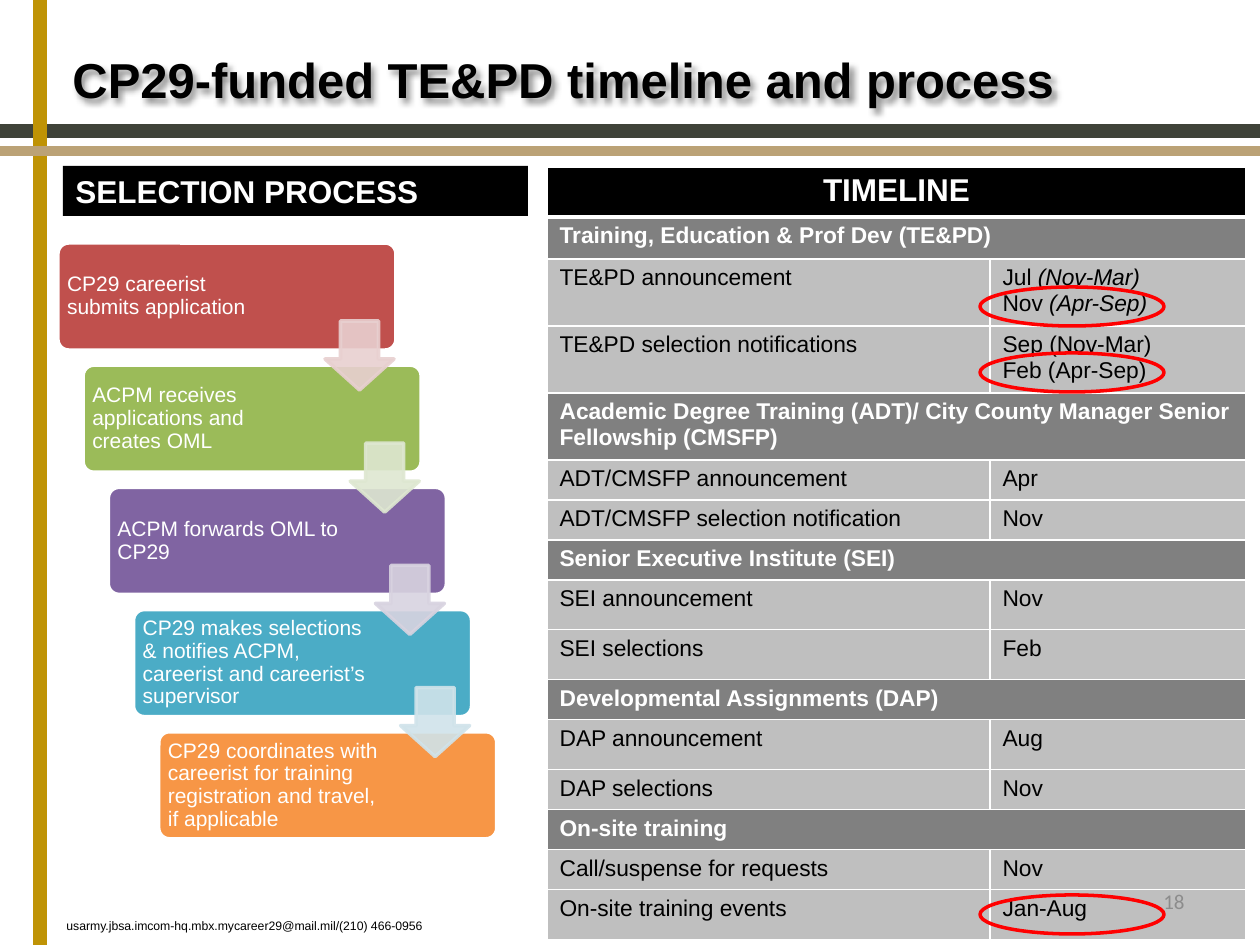
from dataclasses import dataclass

from lxml.etree import SubElement
from pptx import Presentation
from pptx.dml.color import RGBColor
from pptx.enum.shapes import MSO_SHAPE
from pptx.enum.text import MSO_ANCHOR, PP_ALIGN
from pptx.oxml import parse_xml
from pptx.oxml.ns import nsdecls, qn
from pptx.util import Emu, Pt


@dataclass(frozen=True)
class Theme:
    font: str = "Arial"
    number_font: str = "Calibri"
    black: str = "000000"
    white: str = "FFFFFF"
    olive: str = "3F4339"
    gold: str = "BF9305"
    tan: str = "BBA276"
    section: str = "808080"
    row: str = "BFBFBF"
    muted: str = "8C8C8C"
    mark: str = "FF0000"
    steps: tuple = ("C0504D", "9BBB59", "8064A2", "4BACC6", "F79646")
    arrows: tuple = ("E8D0D0", "DEE7D1", "D8D3E0", "D0E3EA")
    title_size: int = 28
    heading_size: int = 18
    table_size: int = 13
    step_size: int = 12
    footer_size: int = 7
    line: int = 2


STEPS = [
    "CP29 careerist submits application",
    "ACPM receives applications and creates OML",
    "ACPM forwards OML to CP29",
    "CP29 makes selections & notifies ACPM, careerist and careerist’s supervisor",
    "CP29 coordinates with careerist for training registration and travel, if applicable",
]

# Row height, label, then lines of (plain, italic) text; a row without lines is a section.
TIMELINE = [
    (42, "Training, Education & Prof Dev (TE&PD)", []),
    (67, "TE&PD announcement", [("Jul ", "(Nov-Mar)"), ("Nov ", "(Apr-Sep)")]),
    (67, "TE&PD selection notifications", [("Sep (Nov-Mar)", ""), ("Feb (Apr-Sep)", "")]),
    (67, "Academic Degree Training (ADT)/ City County Manager Senior Fellowship (CMSFP)", []),
    (40, "ADT/CMSFP announcement", [("Apr", "")]),
    (40, "ADT/CMSFP selection notification", [("Nov", "")]),
    (40, "Senior Executive Institute (SEI)", []),
    (50, "SEI announcement", [("Nov", "")]),
    (50, "SEI selections", [("Feb", "")]),
    (40, "Developmental Assignments (DAP)", []),
    (50, "DAP announcement", [("Aug", "")]),
    (40, "DAP selections", [("Nov", "")]),
    (40, "On-site training", []),
    (40, "Call/suspense for requests", [("Nov", "")]),
    (50, "On-site training events", [("Jan-Aug", "")]),
]


def px(n):
    return Emu(round(n * 914400 / 126))


def rgb(value):
    return RGBColor.from_string(value)


class SlideBuilder:
    def __init__(self, slide, theme):
        self.s = slide
        self.t = theme

    def style(self, p, size, color, bold=False, align=PP_ALIGN.LEFT, font=None):
        p.alignment = align
        p.font.name = font or self.t.font
        p.font.size = Pt(size)
        p.font.bold = bold
        p.font.color.rgb = rgb(color)

    def title(self, text, x, y, w, h):
        sp = self.s.shapes.title
        sp.left, sp.top, sp.width, sp.height = map(px, (x, y, w, h))
        tf = sp.text_frame
        tf.text = text
        tf.vertical_anchor = MSO_ANCHOR.MIDDLE
        self.style(tf.paragraphs[0], self.t.title_size, self.t.black, True, PP_ALIGN.CENTER)
        sp._element.spPr.append(parse_xml(
            f'<a:effectLst {nsdecls("a")}><a:outerShdw blurRad="38100" dist="38100" '
            'dir="2700000" algn="tl"><a:srgbClr val="000000"><a:alpha val="43000"/>'
            '</a:srgbClr></a:outerShdw></a:effectLst>'))

    def shape(self, kind, x, y, w, h, fill=None, line=None, adjust=(), alpha=None):
        sp = self.s.shapes.add_shape(kind, *map(px, (x, y, w, h)))
        sp.shadow.inherit = False
        for i, value in enumerate(adjust):
            sp.adjustments[i] = value
        if fill:
            sp.fill.solid()
            sp.fill.fore_color.rgb = rgb(fill)
        else:
            sp.fill.background()
        if line:
            sp.line.color.rgb = rgb(line)
            sp.line.width = Pt(self.t.line)
        else:
            sp.line.fill.background()
        if alpha:
            for color in sp._element.spPr.iter(qn("a:srgbClr")):
                SubElement(color, qn("a:alpha"), val=str(alpha * 1000))
        return sp

    def text(self, text, x, y, w, h, size, color, anchor=MSO_ANCHOR.TOP, fill=None, **style):
        sp = self.s.shapes.add_textbox(*map(px, (x, y, w, h)))
        if fill:
            sp.fill.solid()
            sp.fill.fore_color.rgb = rgb(fill)
        tf = sp.text_frame
        tf.word_wrap = True
        tf.vertical_anchor = anchor
        tf.text = text
        self.style(tf.paragraphs[0], size, color, **style)

    def step(self, text, x, y, color, right_inset):
        sp = self.shape(MSO_SHAPE.ROUNDED_RECTANGLE, x, y, 338, 107, color, self.t.white, [0.1])
        tf = sp.text_frame
        tf.word_wrap = True
        tf.vertical_anchor = MSO_ANCHOR.MIDDLE
        tf.margin_left = tf.margin_top = tf.margin_bottom = px(6)
        tf.margin_right = px(right_inset)
        tf.text = text
        p = tf.paragraphs[0]
        p.line_spacing = 0.9
        self.style(p, self.t.step_size, self.t.white)

    def cell(self, cell, lines, fill, size, color, bottom=1, **style):
        tc_pr = cell._tc.get_or_add_tcPr()
        for side in "LRTB":
            width = Pt(bottom if side == "B" else 1)
            tc_pr.append(parse_xml(
                f'<a:ln{side} {nsdecls("a")} w="{width}"><a:solidFill>'
                f'<a:srgbClr val="{self.t.white}"/></a:solidFill></a:ln{side}>'))
        cell.fill.solid()
        cell.fill.fore_color.rgb = rgb(fill)
        tf = cell.text_frame
        for i, (plain, italic) in enumerate(lines):
            p = tf.add_paragraph() if i else tf.paragraphs[0]
            p.add_run().text = plain
            if italic:
                r = p.add_run()
                r.text = italic
                r.font.italic = True
            self.style(p, size, color, **style)

    def timeline(self, heading, rows, x, y, widths):
        t = self.t
        heights = [50] + [row[0] for row in rows]
        frame = self.s.shapes.add_table(len(heights), 2, *map(px, (x, y, sum(widths), sum(heights))))
        table = frame.table
        for col, w in zip(table.columns, widths):
            col.width = px(w)
        for row, h in zip(table.rows, heights):
            row.height = px(h)

        def band(i, text, fill, size, **style):
            left, right = table.cell(i, 0), table.cell(i, 1)
            left.merge(right)
            self.cell(left, [(text, "")], fill, size, t.white, bold=True, **style)
            self.cell(right, [], fill, size, t.white)

        band(0, heading, t.black, t.heading_size, bottom=3, align=PP_ALIGN.CENTER)
        for i, (_, label, dates) in enumerate(rows, 1):
            if dates:
                self.cell(table.cell(i, 0), [(label, "")], t.row, t.table_size, t.black)
                self.cell(table.cell(i, 1), dates, t.row, t.table_size, t.black)
            else:
                band(i, label, t.section, t.table_size)


def main():
    prs = Presentation()
    prs.slide_width, prs.slide_height = px(1260), px(945)
    t = Theme()
    b = SlideBuilder(prs.slides.add_slide(prs.slide_layouts[5]), t)

    for box, color in [((0, 126, 1260, 10), t.olive), ((35, 0, 10, 945), t.gold),
                       ((0, 148, 1260, 6), t.tan)]:
        b.shape(MSO_SHAPE.RECTANGLE, *box, color, color)
    b.title("CP29-funded TE&PD timeline and process ", -24, 0, 1188, 158)

    b.timeline("TIMELINE", TIMELINE, 547, 167, (443, 256))
    b.text("18", 903, 876, 294, 50, 12, t.muted, MSO_ANCHOR.MIDDLE,
           align=PP_ALIGN.RIGHT, font=t.number_font)
    b.text("usarmy.jbsa.imcom-hq.mbx.mycareer29@mail.mil/(210) 466-0956",
           54, 912, 474, 28, t.footer_size, t.black)
    b.text("SELECTION PROCESS", 63, 166, 465, 50, t.heading_size, t.white,
           fill=t.black, bold=True)

    step_dx, step_dy = 25.2, 122.2
    for i, (text, color) in enumerate(zip(STEPS, t.steps)):
        b.step(text, 58 + i * step_dx, 243 + i * step_dy, color, 102 if i else 129)
    for i, color in enumerate(t.arrows):
        b.shape(MSO_SHAPE.DOWN_ARROW, 325 + i * step_dx, 321 + i * step_dy, 69, 69,
                color, color, (0.55, 0.45), alpha=90)

    for y in (287, 895, 353):
        b.shape(MSO_SHAPE.OVAL, 980, y, 184, 39, line=t.mark)
    prs.save("out.pptx")


if __name__ == "__main__":
    main()
